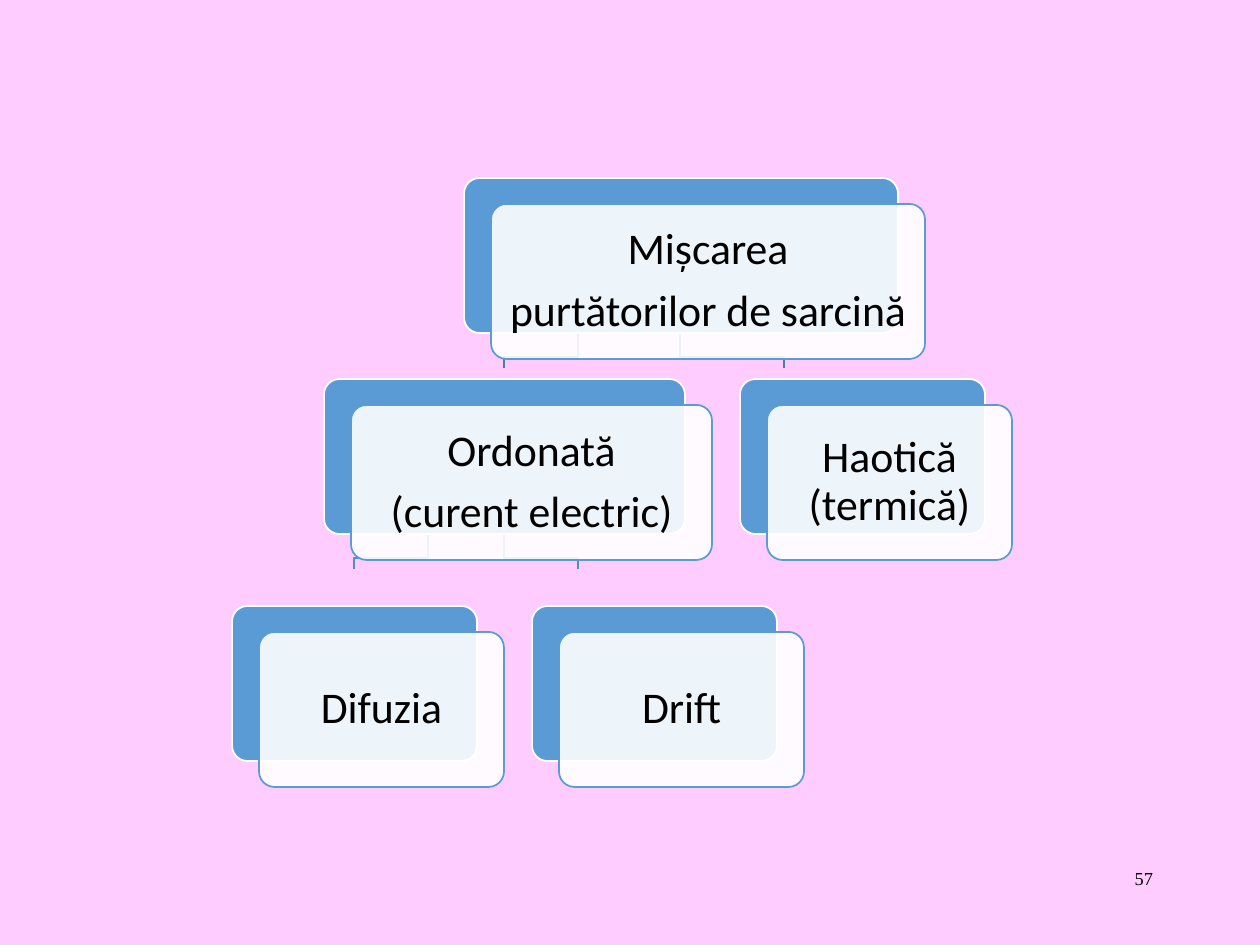
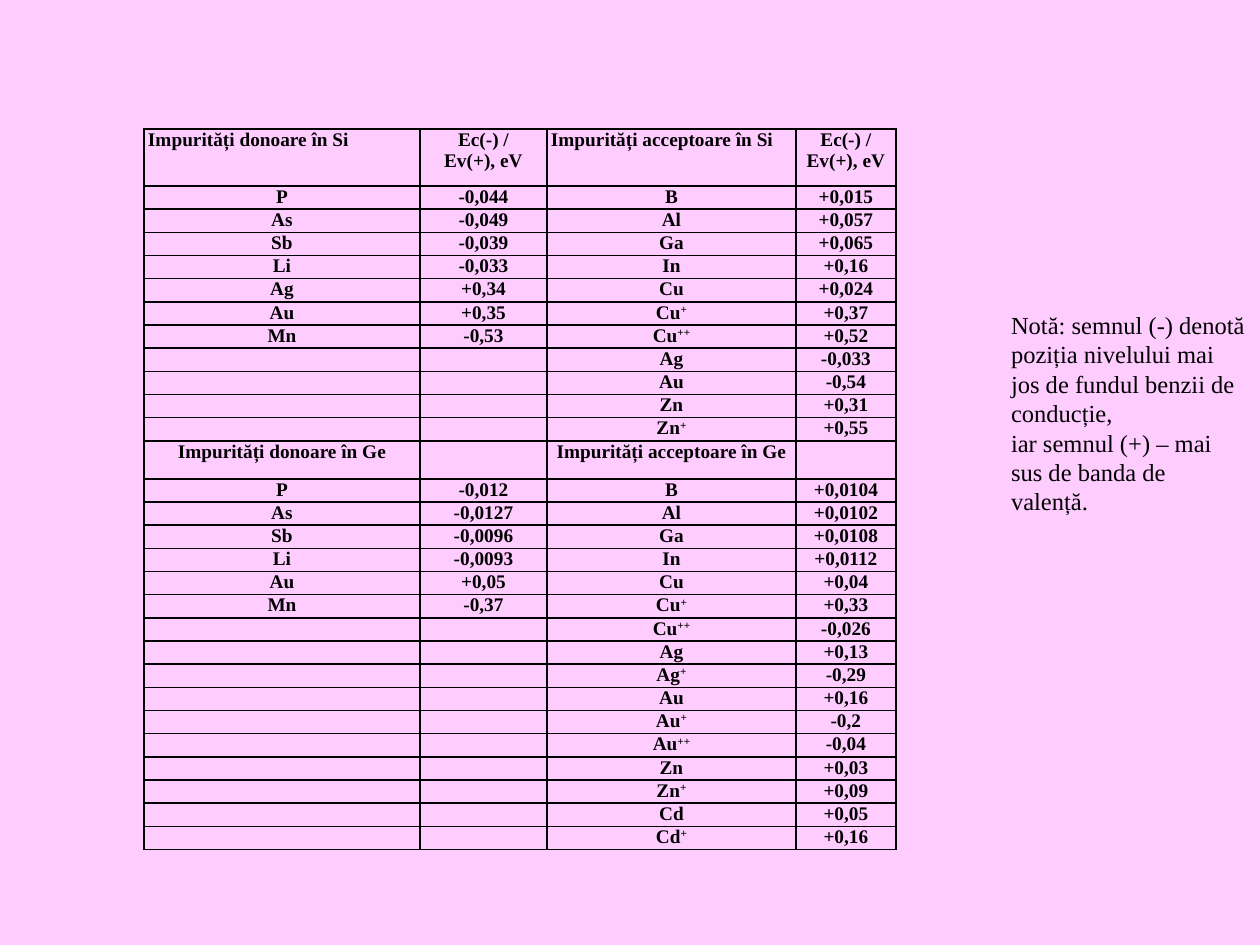
from lxml.etree import SubElement
from pptx import Presentation
from pptx.dml.color import RGBColor
from pptx.enum.shapes import MSO_SHAPE
from pptx.enum.text import MSO_ANCHOR, PP_ALIGN
from pptx.oxml.ns import qn
from pptx.util import Pt

PX = 914400 / 126
HUES = {"page": "FFCCFF", "blue": "5B9BD5", "white": "FFFFFF", "ink": "000000",
        "high": "497CAB", "low": "538DC1"}
SERIF = "Times New Roman"


def px(*nums):
    return [round(n * PX) for n in nums]


def write(frame, text, font=SERIF, size=11, bold=False, align=PP_ALIGN.LEFT,
          pads=(12, 6, 12, 6), anchor=MSO_ANCHOR.TOP, lead=None, after=None):
    frame.word_wrap = True
    frame.vertical_anchor = anchor
    (frame.margin_left, frame.margin_top,
     frame.margin_right, frame.margin_bottom) = px(*pads)
    for i, line in enumerate(text.split("\n")):
        para = frame.add_paragraph() if i else frame.paragraphs[0]
        para.alignment = align
        para.line_spacing = lead
        para.space_after = after
        if not line:
            SubElement(para._p, qn("a:endParaRPr"), sz=str(size * 100))
            continue
        for j, part in enumerate(line.split("^")):
            run = para.add_run()
            run.text = part
            run.font.name = font
            run.font.size = Pt(size)
            run.font.bold = bold
            run.font.color.rgb = RGBColor.from_string(HUES["ink"])
            if j:
                run.font._element.set("baseline", "30000")


deck = Presentation()
deck.slide_width, deck.slide_height = px(1260, 945)
back = deck.slide_master.background.fill
back.solid()
back.fore_color.rgb = RGBColor.from_string(HUES["page"])
blank = deck.slide_layouts[6]

tree = deck.slides.add_slide(blank)
box = tree.shapes.add_textbox(*px(903, 861, 262, 63))
write(box.text_frame, "57", size=10.5, align=PP_ALIGN.RIGHT)

wires = [
    (680, 784, 333, "high"),
    (504, 578, 534, "low"),
    (428, 354, 534, "low"),
    (578, 504, 333, "high"),
]
for start, end, top, hue in wires:
    pen = tree.shapes.build_freeform(start, top, scale=PX)
    pen.add_line_segments(
        [(start, top + 24), (end, top + 24), (end, top + 35)], close=False)
    wire = pen.convert_to_shape()
    wire.shadow.inherit = False
    wire.fill.background()
    wire.line.color.rgb = RGBColor.from_string(HUES[hue])
    wire.line.width = Pt(1)

nodes = [
    (464, 178, 434, "Mișcarea\npurtătorilor de sarcină"),
    (324, 379, 361, "Ordonată\n(curent electric)"),
    (232, 606, 245, "Difuzia"),
    (532, 606, 245, "Drift"),
    (740, 379, 245, "Haotică (termică)"),
]
for left, top, width, text in nodes:
    for shift, fill, line in [(0, "blue", "white"), (27, "white", "blue")]:
        card = tree.shapes.add_shape(
            MSO_SHAPE.ROUNDED_RECTANGLE,
            *px(left + shift, top + shift * 0.96, width, 155))
        card.adjustments[0] = 0.1
        card.shadow.inherit = False
        card.fill.solid()
        card.fill.fore_color.rgb = RGBColor.from_string(HUES[fill])
        card.line.color.rgb = RGBColor.from_string(HUES[line])
        card.line.width = Pt(1)
    tint = card._element.spPr.find(f"{qn('a:solidFill')}/{qn('a:srgbClr')}")
    SubElement(tint, qn("a:alpha"), val="90000")
    write(card.text_frame, text, font="Calibri", size=25, align=PP_ALIGN.CENTER,
          pads=(12, 12, 12, 12), anchor=MSO_ANCHOR.MIDDLE, lead=0.9, after=Pt(8))

data = deck.slides.add_slide(blank)
rows = [
    ("Impurități donoare în Si", "Ec(-) /\nEv(+), eV",
     "Impurități acceptoare în Si", "Ec(-) / Ev(+), eV"),
    ("P", "-0,044", "B", "+0,015"),
    ("As", "-0,049", "Al", "+0,057"),
    ("Sb", "-0,039", "Ga", "+0,065"),
    ("Li", "-0,033", "In", "+0,16"),
    ("Ag", "+0,34", "Cu", "+0,024"),
    ("Au", "+0,35", "Cu^+", "+0,37"),
    ("Mn", "-0,53", "Cu^++", "+0,52"),
    ("", "", "Ag", "-0,033"),
    ("", "", "Au", "-0,54"),
    ("", "", "Zn", "+0,31"),
    ("", "", "Zn^+", "+0,55"),
    ("Impurități donoare în Ge", "", "Impurități acceptoare în Ge", ""),
    ("P", "-0,012", "B", "+0,0104"),
    ("As", "-0,0127", "Al", "+0,0102"),
    ("Sb", "-0,0096", "Ga", "+0,0108"),
    ("Li", "-0,0093", "In", "+0,0112"),
    ("Au", "+0,05", "Cu", "+0,04"),
    ("Mn", "-0,37", "Cu^+", "+0,33"),
    ("", "", "Cu^++", "-0,026"),
    ("", "", "Ag", "+0,13"),
    ("", "", "Ag^+", "-0,29"),
    ("", "", "Au", "+0,16"),
    ("", "", "Au^+", "-0,2"),
    ("", "", "Au^++", "-0,04"),
    ("", "", "Zn", "+0,03"),
    ("", "", "Zn^+", "+0,09"),
    ("", "", "Cd", "+0,05"),
    ("", "", "Cd^+", "+0,16"),
]
wide = px(276, 127, 249, 100)
tall = {0: 57, 12: 38}
grid = data.shapes.add_table(len(rows), len(wide), *px(144, 129, 752, 689)).table
grid.first_row = grid.horz_banding = False
for col, width in zip(grid.columns, wide):
    col.width = width
for r, row in enumerate(rows):
    grid.rows[r].height = px(tall.get(r, 22))[0]
    for c, text in enumerate(row):
        cell = grid.cell(r, c)
        props = cell._tc.get_or_add_tcPr()
        for side in ("lnL", "lnR", "lnT", "lnB"):
            edge = SubElement(props, qn(f"a:{side}"), w=str(Pt(1)))
            paint = SubElement(edge, qn("a:solidFill"))
            SubElement(paint, qn("a:srgbClr"), val=HUES["ink"])
        cell.fill.background()
        cell.vertical_anchor = MSO_ANCHOR.TOP
        cell.margin_left, cell.margin_right = px(4, 4)
        cell.margin_top = cell.margin_bottom = 0
        first = r == 0 and c in (0, 2)
        write(cell.text_frame, text, bold=True, pads=(4, 0, 4, 0),
              align=PP_ALIGN.JUSTIFY if first else PP_ALIGN.CENTER)
        body = cell.text_frame._txBody.bodyPr
        body.attrib.clear()

note = data.shapes.add_textbox(*px(999, 304, 261, 184))
write(note.text_frame,
      "Notă: semnul (-) denotă poziția nivelului mai jos de fundul benzii de conducție,\n"
      "iar semnul (+) – mai sus de banda de valență.", size=14)

deck.save("out.pptx")
